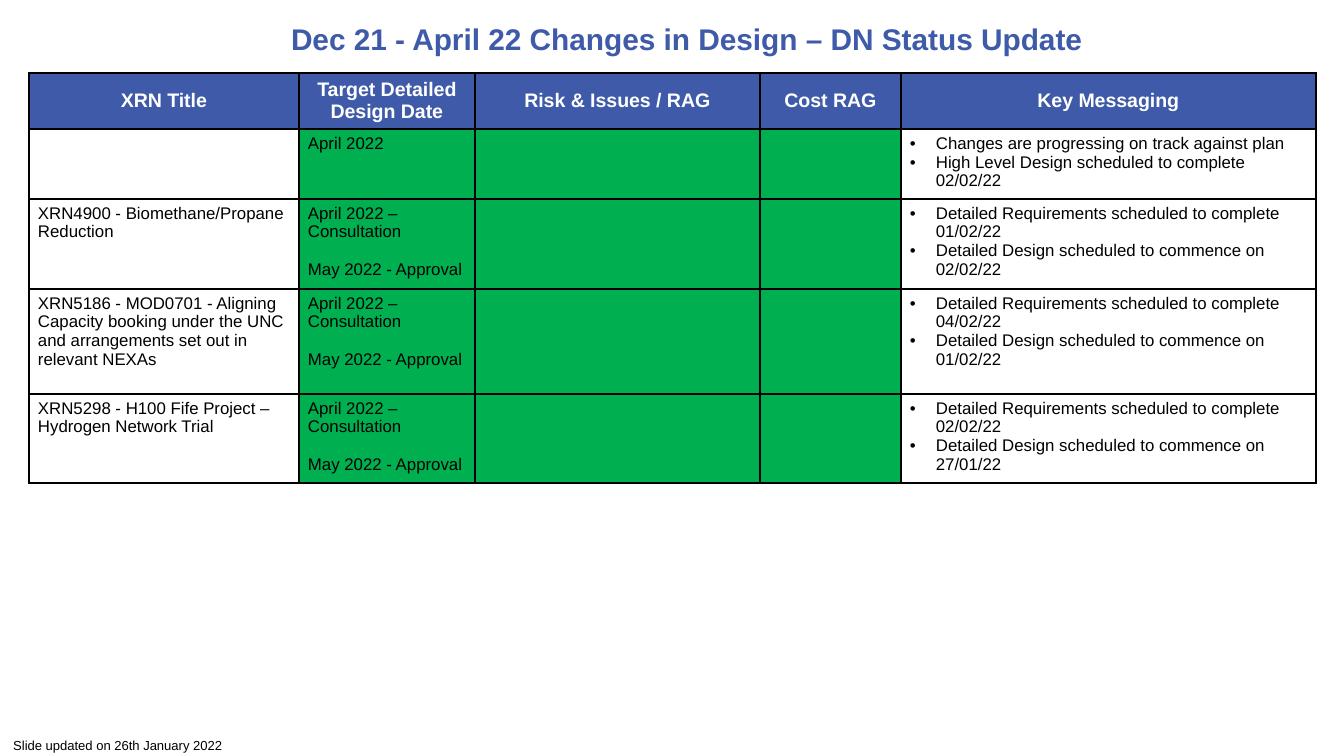
from dataclasses import dataclass

import lxml.etree
import pptx
import pptx.dml.color
import pptx.enum.text
import pptx.oxml.ns
import pptx.util

TITLE = "Dec 21 - April 22 Changes in Design – DN Status Update"
FOOTER = "Slide updated on 26th\u00a0January 2022".replace("\u00a0", " ")
HEADERS = ["XRN Title", "Target Detailed Design Date", "Risk & Issues / RAG",
           "Cost RAG", "Key Messaging"]
TWO_STAGES = ["April 2022 – Consultation", "May 2022 - Approval"]
# Title, target dates, key messages
CHANGES = [
    ("", ["April 2022"],
     ["Changes are progressing on track against plan",
      "High Level Design scheduled to complete 02/02/22"]),
    ("XRN4900 - Biomethane/Propane Reduction", TWO_STAGES,
     ["Detailed Requirements scheduled to complete 01/02/22",
      "Detailed Design scheduled to commence on 02/02/22"]),
    ("XRN5186 - MOD0701 - Aligning Capacity booking under the UNC and "
     "arrangements set out in relevant NEXAs", TWO_STAGES,
     ["Detailed Requirements scheduled to complete 04/02/22",
      "Detailed Design scheduled to commence on 01/02/22"]),
    ("XRN5298 - H100 Fife Project – Hydrogen Network Trial", TWO_STAGES,
     ["Detailed Requirements scheduled to complete 02/02/22",
      "Detailed Design scheduled to commence on 27/01/22"]),
]

SLIDE_SIZE = (1344, 756)
TITLE_BOX = (82, -8, 1210, 94)
FOOTER_BOX = (0, 731, 239, 30)
TABLE_ORIGIN = (29, 73)
COLUMNS = [270, 176, 285, 141, 415]
ROWS = [56, 70, 90, 105, 89]
CELL_MARGINS = (9, 5)
BULLET_INDENT = 26


@dataclass(frozen=True)
class Theme:
    font: str = "Arial"
    blue: str = "3E5AA8"
    green: str = "00B050"
    white: str = "FFFFFF"
    black: str = "000000"
    title_size: float = 16
    header_size: float = 10.5
    body_size: float = 9
    footer_size: float = 7
    stage_gap: float = 10
    border: float = 1


THEME = Theme()
CENTER = pptx.enum.text.PP_ALIGN.CENTER
LEFT = pptx.enum.text.PP_ALIGN.LEFT
MIDDLE = pptx.enum.text.MSO_ANCHOR.MIDDLE


def px(length):
    return pptx.util.Emu(round(length * 914400 / 134.4))


def rgb(color):
    return pptx.dml.color.RGBColor.from_string(color)


def add_element(parent, tag, **attributes):
    element = lxml.etree.SubElement(parent, pptx.oxml.ns.qn(tag))
    for name, value in attributes.items():
        element.set(name, str(value))
    return element


def write(frame, lines, size, color, bold=False, align=LEFT, bullets=False, gap=0):
    for index, line in enumerate(lines):
        para = frame.paragraphs[0] if index == 0 else frame.add_paragraph()
        para.text = line
        para.alignment = align
        if index and gap:
            para.space_before = pptx.util.Pt(gap)
        if bullets:
            properties = para._p.get_or_add_pPr()
            properties.set("marL", str(px(BULLET_INDENT)))
            properties.set("indent", str(-px(BULLET_INDENT)))
            add_element(properties, "a:buFont", typeface=THEME.font)
            add_element(properties, "a:buChar", char="•")
        para.font.name = THEME.font
        para.font.size = pptx.util.Pt(size)
        para.font.bold = bold
        para.font.color.rgb = rgb(color)


def style_cell(cell, fill):
    """Set margins, borders and fill; borders must precede the fill in the XML."""
    cell.margin_left = cell.margin_right = px(CELL_MARGINS[0])
    cell.margin_top = cell.margin_bottom = px(CELL_MARGINS[1])
    properties = cell._tc.get_or_add_tcPr()
    for side in ("a:lnL", "a:lnR", "a:lnT", "a:lnB"):
        line = add_element(properties, side, w=pptx.util.Pt(THEME.border))
        add_element(add_element(line, "a:solidFill"), "a:srgbClr", val=THEME.black)
    if fill:
        cell.fill.solid()
        cell.fill.fore_color.rgb = rgb(fill)
    else:
        cell.fill.background()


def add_status_table(page):
    table = page.shapes.add_table(
        len(ROWS), len(COLUMNS), *map(px, TABLE_ORIGIN),
        px(sum(COLUMNS)), px(sum(ROWS))).table
    table.horz_banding = False
    for column, width in zip(table.columns, COLUMNS):
        column.width = px(width)
    for row, height in zip(table.rows, ROWS):
        row.height = px(height)

    for cell, header in zip(table.rows[0].cells, HEADERS):
        style_cell(cell, THEME.blue)
        cell.vertical_anchor = MIDDLE
        write(cell.text_frame, [header], THEME.header_size, THEME.white,
              bold=True, align=CENTER)

    fills = [None, THEME.green, THEME.green, THEME.green, None]
    for row, (title, dates, messages) in zip(list(table.rows)[1:], CHANGES):
        cells = list(row.cells)
        for cell, fill in zip(cells, fills):
            style_cell(cell, fill)
        body = (THEME.body_size, THEME.black)
        if title:
            write(cells[0].text_frame, [title], *body)
        write(cells[1].text_frame, dates, *body, gap=THEME.stage_gap)
        write(cells[4].text_frame, messages, *body, bullets=True)


def main():
    deck = pptx.Presentation()
    deck.slide_width, deck.slide_height = map(px, SLIDE_SIZE)
    page = deck.slides.add_slide(deck.slide_layouts[6])

    add_status_table(page)

    title = page.shapes.add_textbox(*map(px, TITLE_BOX)).text_frame
    title.word_wrap = True
    title.vertical_anchor = MIDDLE
    write(title, [TITLE], THEME.title_size, THEME.blue, bold=True, align=CENTER)

    footer = page.shapes.add_textbox(*map(px, FOOTER_BOX)).text_frame
    footer.word_wrap = False
    footer.auto_size = pptx.enum.text.MSO_AUTO_SIZE.SHAPE_TO_FIT_TEXT
    write(footer, [FOOTER], THEME.footer_size, THEME.black)

    deck.save("out.pptx")


if __name__ == "__main__":
    main()
